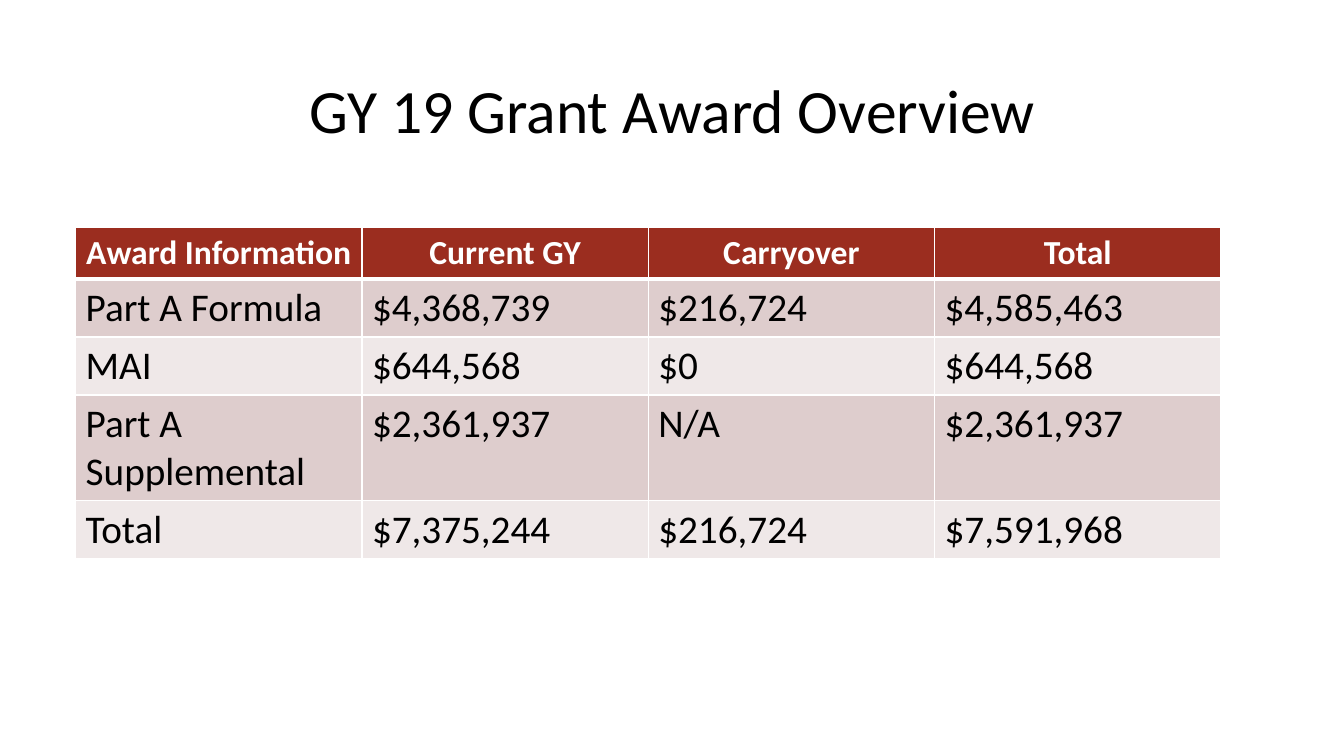
import pptx
import pptx.dml.color
import pptx.enum.text
import pptx.oxml.ns
import pptx.util
from lxml import etree
from pptx.dml.color import RGBColor
from pptx.util import Inches

FONT = "Calibri"
BLACK = RGBColor(0x00, 0x00, 0x00)
WHITE = RGBColor(0xFF, 0xFF, 0xFF)
HEADER_RED = RGBColor(0x9B, 0x2D, 0x1F)
BAND_DARK = RGBColor(0xDE, 0xCD, 0xCD)
BAND_LIGHT = RGBColor(0xEF, 0xE8, 0xE8)

AWARDS = [
    ["Award Information", "Current GY", "Carryover", "Total"],
    ["Part A Formula", "$4,368,739", "$216,724", "$4,585,463"],
    ["MAI", "$644,568", "$0", "$644,568"],
    ["Part A Supplemental", "$2,361,937", "N/A", "$2,361,937"],
    ["Total", "$7,375,244", "$216,724", "$7,591,968"],
]


def format_paragraph(paragraph, size, color, bold, alignment):
    paragraph.alignment = alignment
    paragraph.font.name = FONT
    paragraph.font.size = pptx.util.Pt(size)
    paragraph.font.bold = bold
    paragraph.font.color.rgb = color


def set_borders(cell, widths):
    """Draw white cell borders; widths maps each side to points."""
    properties = cell._tc.get_or_add_tcPr()
    for side, width in widths.items():
        line = etree.SubElement(properties, pptx.oxml.ns.qn(f"a:ln{side}"),
                                w=str(pptx.util.Pt(width)))
        fill = etree.SubElement(line, pptx.oxml.ns.qn("a:solidFill"))
        etree.SubElement(fill, pptx.oxml.ns.qn("a:srgbClr"), val=str(WHITE))


def add_title(slide, text):
    title = slide.shapes.title
    title.left, title.top = Inches(0.92), Inches(0.4)
    title.width, title.height = Inches(11.5), Inches(1.45)
    title.text_frame.text = text
    title.text_frame.word_wrap = True
    title.text_frame.vertical_anchor = pptx.enum.text.MSO_ANCHOR.MIDDLE
    paragraph = title.text_frame.paragraphs[0]
    paragraph.line_spacing = 0.9
    format_paragraph(paragraph, 44, BLACK, False, pptx.enum.text.PP_ALIGN.CENTER)


def fill_cell(cell, text, row_index):
    # The heavy rule lies between the header and the first award
    set_borders(cell, {"L": 1, "R": 1,
                       "T": 3 if row_index == 1 else 1,
                       "B": 3 if row_index == 0 else 1})
    cell.text = text
    paragraph = cell.text_frame.paragraphs[0]
    cell.fill.solid()
    if row_index == 0:
        cell.fill.fore_color.rgb = HEADER_RED
        format_paragraph(paragraph, 24, WHITE, True, pptx.enum.text.PP_ALIGN.CENTER)
    else:
        cell.fill.fore_color.rgb = BAND_DARK if row_index % 2 else BAND_LIGHT
        format_paragraph(paragraph, 28, BLACK, False, pptx.enum.text.PP_ALIGN.LEFT)


def add_award_table(slide, rows):
    column_width, row_height = Inches(2.84), Inches(0.41)
    column_count = len(rows[0])
    table = slide.shapes.add_table(
        len(rows), column_count, Inches(0.75), Inches(2.26),
        column_width * column_count, row_height * len(rows)).table
    for row_index, row in enumerate(rows):
        for column_index, text in enumerate(row):
            fill_cell(table.cell(row_index, column_index), text, row_index)


def main():
    presentation = pptx.Presentation()
    presentation.slide_width = Inches(13.33)
    presentation.slide_height = Inches(7.5)

    # Title Only layout
    slide = presentation.slides.add_slide(presentation.slide_layouts[5])
    add_title(slide, "GY 19 Grant Award Overview")
    add_award_table(slide, AWARDS)

    presentation.save("out.pptx")


if __name__ == "__main__":
    main()
